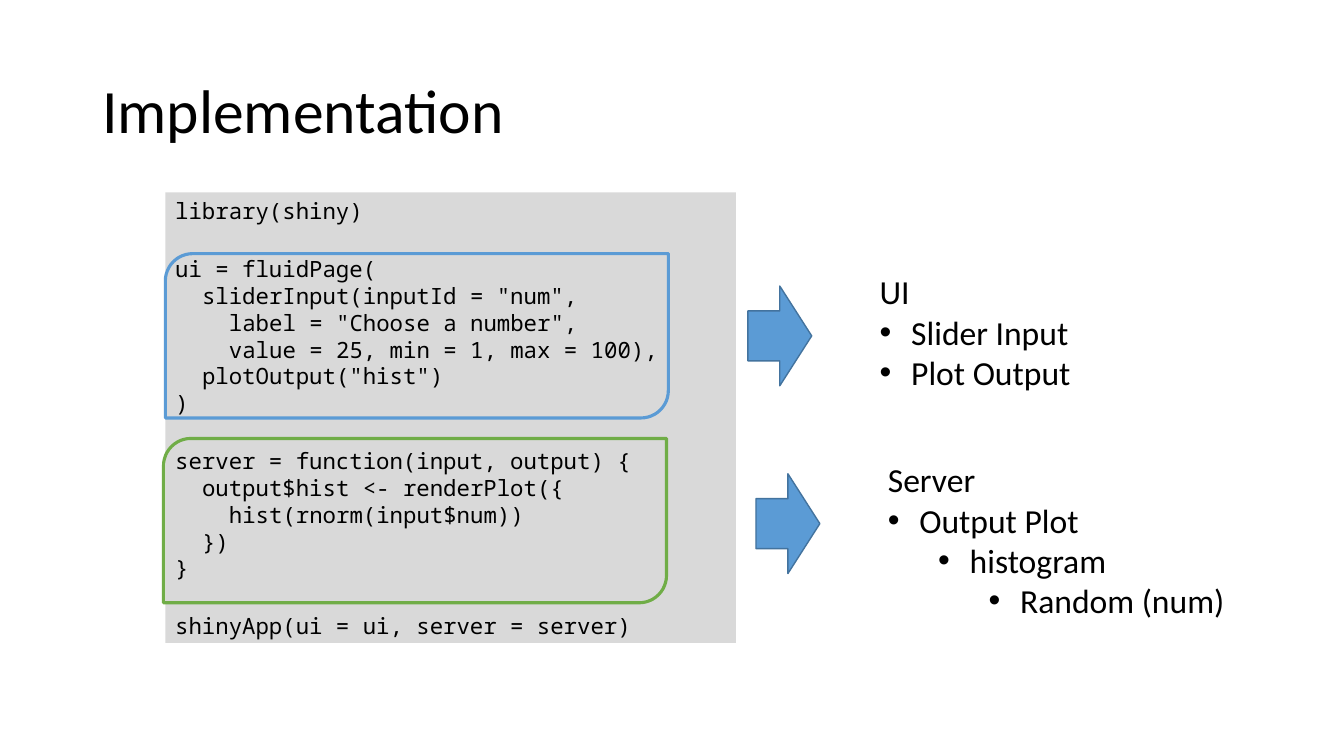
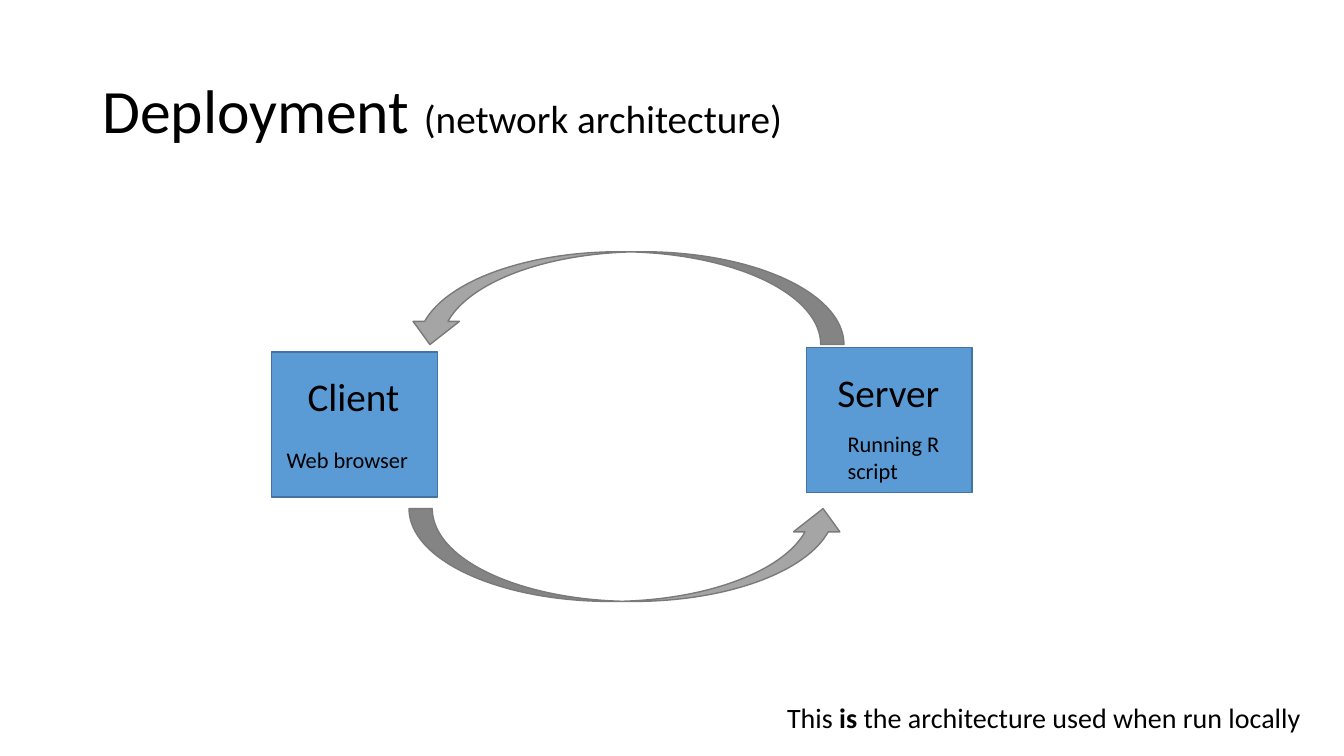
"""Builds two slides on the code and the network architecture of a Shiny app."""
from lxml import etree
from pptx import Presentation
from pptx import util as u
from pptx.dml.color import RGBColor
from pptx.enum import shapes, text
from pptx.oxml import ns

COLORS = {
    "text": "000000",
    "code_panel": "D9D9D9",
    "blue": "5B9BD5",
    "blue_edge": "43739E",
    "green": "70AD47",
    "gray": "A5A5A5",
    "gray_edge": "7A7A7A",
}
BODY_FONT = "Calibri"
CODE_FONT = "Noto Sans Mono"
CODE_INDENT = 9.6
CODE_GAP = 22
BULLET_INDENT = 22.5
LEVEL_INDENT = 36

CODE_BLOCKS = [
    [(0, "library(shiny)")],
    [
        (0, "ui = fluidPage("),
        (2, 'sliderInput(inputId = "num",'),
        (4, 'label = "Choose a number",'),
        (4, "value = 25, min = 1, max = 100),"),
        (2, 'plotOutput("hist")'),
        (0, ")"),
    ],
    [
        (0, "server = function(input, output) {"),
        (2, "output$hist <- renderPlot({"),
        (4, "hist(rnorm(input$num))"),
        (2, "})"),
        (0, "}"),
    ],
    [(0, "shinyApp(ui = ui, server = server)")],
]


def color(name):
    return RGBColor.from_string(COLORS[name])


def points(*lengths):
    return [u.Pt(length) for length in lengths]


def style_run(run, size, font=BODY_FONT, bold=False):
    run.font.size = u.Pt(size)
    run.font.name = font
    run.font.bold = bold
    run.font.color.rgb = color("text")


def indent_paragraph(paragraph, left, first=0):
    properties = paragraph._p.get_or_add_pPr()
    properties.set("marL", str(u.Pt(left)))
    properties.set("indent", str(u.Pt(first)))
    return properties


def add_bullet(paragraph, level):
    left = BULLET_INDENT + level * LEVEL_INDENT
    properties = indent_paragraph(paragraph, left, -BULLET_INDENT)
    font = etree.SubElement(properties, ns.qn("a:buFont"))
    font.set("typeface", "Arial")
    bullet = etree.SubElement(properties, ns.qn("a:buChar"))
    bullet.set("char", "•")


def add_text(slide, box, runs, centered=False):
    """Adds one paragraph made of (text, size, bold) runs."""
    frame = slide.shapes.add_textbox(*points(*box)).text_frame
    frame.word_wrap = True
    paragraph = frame.paragraphs[0]
    if centered:
        paragraph.alignment = text.PP_ALIGN.CENTER
    for words, size, bold in runs:
        run = paragraph.add_run()
        run.text = words
        style_run(run, size, bold=bold)
    return frame


def add_title(slide, *runs):
    frame = add_text(slide, (66, 28.8, 828, 104.4), runs)
    frame.vertical_anchor = text.MSO_ANCHOR.MIDDLE
    frame.paragraphs[0].line_spacing = 0.9


def add_shape(slide, kind, box, fill=None, line=None, width=1, rotation=0):
    shape = slide.shapes.add_shape(kind, *points(*box))
    shape.shadow.inherit = False
    shape.rotation = rotation
    if fill:
        shape.fill.solid()
        shape.fill.fore_color.rgb = color(fill)
    else:
        shape.fill.background()
    if line:
        shape.line.color.rgb = color(line)
        shape.line.width = u.Pt(width)
    else:
        shape.line.fill.background()
    return shape


def add_code(slide, box):
    panel = add_shape(slide, shapes.MSO_SHAPE.RECTANGLE, box, "code_panel")
    frame = panel.text_frame
    frame.vertical_anchor = text.MSO_ANCHOR.TOP
    lines = [
        (depth, words, CODE_GAP if block and not row else 0)
        for block, rows in enumerate(CODE_BLOCKS)
        for row, (depth, words) in enumerate(rows)
    ]
    frame.text = "\n".join(words for _, words, _ in lines)
    for paragraph, (depth, _, gap) in zip(frame.paragraphs, lines):
        paragraph.alignment = text.PP_ALIGN.LEFT
        paragraph.space_before = u.Pt(gap)
        indent_paragraph(paragraph, depth * CODE_INDENT)
        style_run(paragraph.runs[0], 16, CODE_FONT)


def add_outline(slide, left, top, line):
    kind = shapes.MSO_SHAPE.ROUND_2_DIAG_RECTANGLE
    add_shape(slide, kind, (left, top, 359.3, 117.4), line=line, width=2.25)


def add_summary(slide, left, top, height, heading, bullets):
    """Adds a block arrow and the bulleted list it points to."""
    arrow_box = (left, top, 45.6, 71.3)
    add_shape(slide, shapes.MSO_SHAPE.RIGHT_ARROW, arrow_box, "blue", "blue_edge")
    list_box = (left + 87.1, top - 14, 283, height)
    frame = add_text(slide, list_box, [(heading, 24, False)])
    for level, words in enumerate(bullets):
        paragraph = frame.add_paragraph()
        paragraph.text = words[1]
        add_bullet(paragraph, words[0])
        style_run(paragraph.runs[0], 24)


def add_machine(slide, left, top, name):
    box = (left, top, 118.4, 103.7)
    add_shape(slide, shapes.MSO_SHAPE.RECTANGLE, box, "blue", "blue_edge")
    label_box = (left + 12, top + 11, 93, 41)
    add_text(slide, label_box, [(name, 28, False)], centered=True)


def add_curved_arrow(slide, left, top, rotation):
    box = (left, top, 66.3, 312.3)
    kind = shapes.MSO_SHAPE.CURVED_RIGHT_ARROW
    add_shape(slide, kind, box, "gray", "gray_edge", rotation=rotation)


def build_implementation(slide):
    add_title(slide, ("Implementation", 44, False))
    add_code(slide, (118.1, 137.5, 407.5, 321.8))
    add_outline(slide, 118.1, 181.2, "blue")
    add_outline(slide, 116.8, 313.2, "green")
    add_summary(slide, 534.2, 204.3, 94, "UI",
                [(0, "Slider Input"), (0, "Plot Output")])
    add_summary(slide, 540, 338.4, 122, "Server",
                [(0, "Output Plot"), (1, "histogram"), (2, "Random (num)")])


def build_deployment(slide):
    add_title(slide, ("Deployment ", 44, False),
              ("(network architecture)", 28, False))
    add_machine(slide, 194, 251.5, "Client")
    add_machine(slide, 576, 248.3, "Server")
    add_curved_arrow(slide, 413.5, 56.8, 90)
    add_curved_arrow(slide, 415.2, 240.3, 270)
    add_text(slide, (598.3, 303.8, 80.6, 45.4), [("Running R script", 16, False)])
    add_text(slide, (197.7, 315.4, 106, 26.6), [("Web browser", 16, False)])
    add_text(slide, (555.1, 496.8, 391.7, 31), [
        ("This ", 20, False),
        ("is", 20, True),
        (" the architecture used when run locally", 20, False),
    ])


def main():
    presentation = Presentation()
    presentation.slide_width, presentation.slide_height = points(960, 540)
    blank = presentation.slide_layouts[6]
    for build in (build_implementation, build_deployment):
        build(presentation.slides.add_slide(blank))
    presentation.save("out.pptx")


if __name__ == "__main__":
    main()
